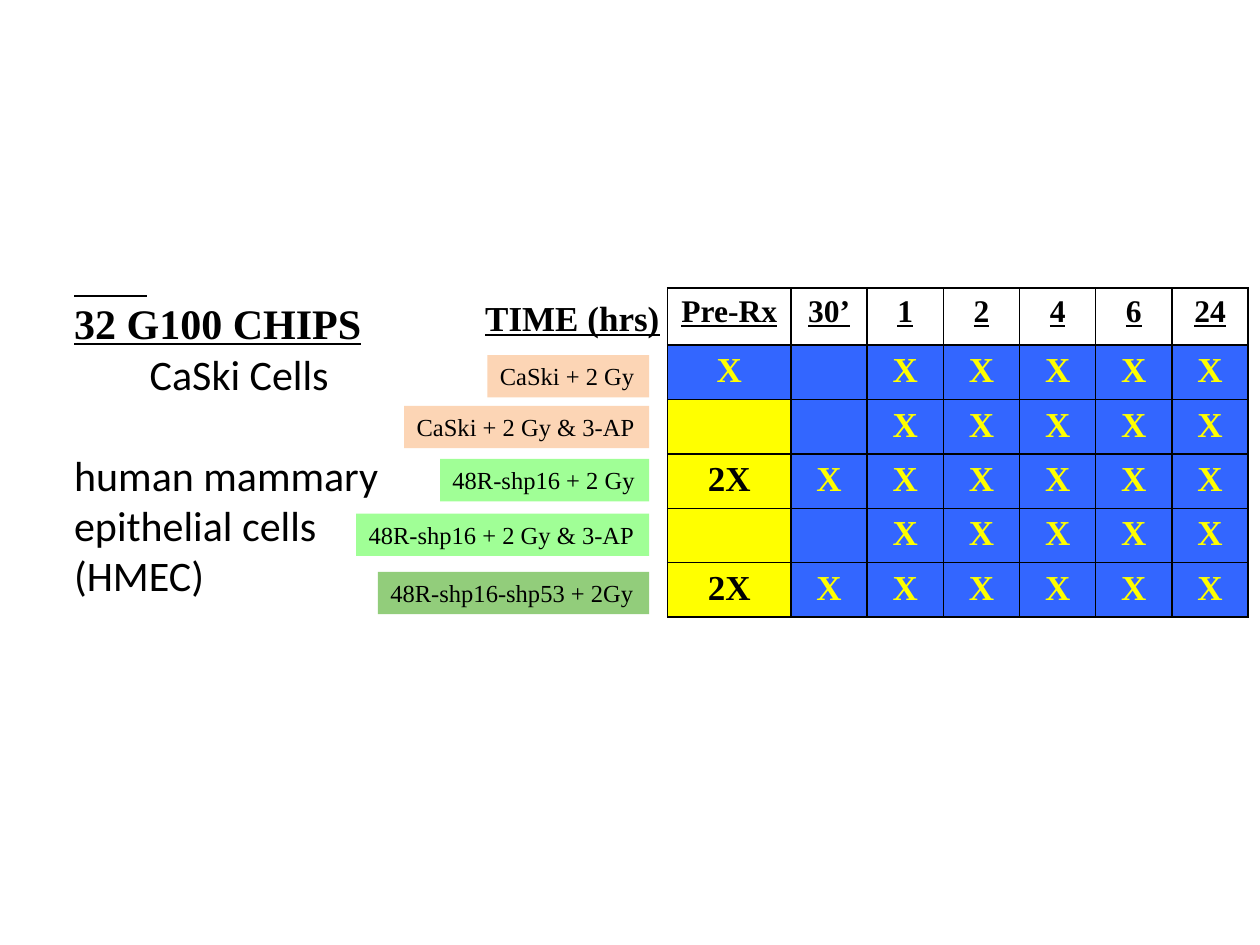
from lxml import etree
from pptx import Presentation
from pptx.dml.color import RGBColor
from pptx.enum.shapes import MSO_CONNECTOR, MSO_SHAPE
from pptx.enum.text import MSO_ANCHOR, PP_ALIGN
from pptx.oxml.ns import qn
from pptx.util import Pt

STRAIGHT = MSO_CONNECTOR.STRAIGHT
RECTANGLE = MSO_SHAPE.RECTANGLE
TOP = MSO_ANCHOR.TOP
LEFT, CENTER, RIGHT = PP_ALIGN.LEFT, PP_ALIGN.CENTER, PP_ALIGN.RIGHT

BLACK = RGBColor(0x00, 0x00, 0x00)
YELLOW = RGBColor(0xFF, 0xFF, 0x00)
BLUE = RGBColor(0x33, 0x66, 0xFF)
PEACH = RGBColor(0xFC, 0xD5, 0xB5)
LIGHT_GREEN = RGBColor(0xA0, 0xFF, 0x96)
GREEN = RGBColor(0x92, 0xCD, 0x7B)

SERIF, SANS = "Times New Roman", "Calibri"
LABEL = {"name": SERIF, "size": Pt(14)}
HEADER = {"name": SERIF, "size": Pt(18), "bold": True, "underline": True}
MARK = {"name": SERIF, "size": Pt(20), "bold": True}
TIME_TITLE = {**MARK, "underline": True}
CHIP_TITLE = {**TIME_TITLE, "size": Pt(24)}
CELLS = {"name": SANS, "size": Pt(24)}


class SlideBuilder:
    def __init__(self, page):
        self.page = page

    def add_text(self, para, text, style, color=BLACK, align=LEFT):
        para.alignment = align
        span = para.add_run()
        span.text = text
        for name, value in style.items():
            setattr(span.font, name, value)
        span.font.color.rgb = color

    def text_box(self, left, top, width, height, paragraphs, wrap=True, align=LEFT):
        box = self.page.shapes.add_textbox(Pt(left), Pt(top), Pt(width), Pt(height))
        frame = box.text_frame
        frame.word_wrap = wrap
        for index, (text, style, indent, before) in enumerate(paragraphs):
            para = frame.add_paragraph() if index else frame.paragraphs[0]
            if indent:
                para._p.get_or_add_pPr().set("marL", str(Pt(indent)))
            if before:
                para.space_before = Pt(before)
            self.add_text(para, text, style, align=align)

    def label(self, right, top, width, height, text, fill):
        box = self.page.shapes.add_shape(
            RECTANGLE, Pt(right - width), Pt(top), Pt(width), Pt(height))
        box.shadow.inherit = False
        box.fill.solid()
        box.fill.fore_color.rgb = fill
        box.line.fill.background()
        frame = box.text_frame
        frame.word_wrap = False
        frame.vertical_anchor = TOP
        self.add_text(frame.paragraphs[0], text, LABEL)

    def line(self, x1, y1, x2, y2, weight):
        rule = self.page.shapes.add_connector(STRAIGHT, Pt(x1), Pt(y1), Pt(x2), Pt(y2))
        rule.line.color.rgb = BLACK
        rule.line.width = Pt(weight)
        etree.SubElement(rule._element.spPr, qn("a:effectLst"))

    def border(self, cell):
        properties = cell._tc.get_or_add_tcPr()
        for position, side in enumerate(("a:lnL", "a:lnR", "a:lnT", "a:lnB")):
            edge = etree.Element(qn(side), w=str(Pt(1)))
            fill = etree.SubElement(edge, qn("a:solidFill"))
            etree.SubElement(fill, qn("a:srgbClr"), val=str(BLACK))
            properties.insert(position, edge)

    def table(self, left, top, widths, heights, rows):
        grid = self.page.shapes.add_table(
            len(rows), len(widths), Pt(left), Pt(top),
            Pt(sum(widths)), Pt(sum(heights))).table
        grid.first_row = grid.horz_banding = False
        for column, width in zip(grid.columns, widths):
            column.width = Pt(width)
        for row, height in zip(grid.rows, heights):
            row.height = Pt(height)
        for r, row in enumerate(rows):
            for c, text in enumerate(row):
                cell = grid.cell(r, c)
                # The baseline column is yellow wherever it is not a single chip
                yellow_cell = c == 0 and text != "X"
                if r == 0:
                    cell.fill.background()
                else:
                    cell.fill.solid()
                    cell.fill.fore_color.rgb = YELLOW if yellow_cell else BLUE
                self.border(cell)
                if text:
                    color = BLACK if r == 0 or yellow_cell else YELLOW
                    self.add_text(cell.text_frame.paragraphs[0], text,
                                  MARK if r else HEADER, color, CENTER)


def main():
    deck = Presentation()
    deck.slide_width, deck.slide_height = Pt(720), Pt(540)
    builder = SlideBuilder(deck.slides.add_slide(deck.slide_layouts[6]))

    # Chip schedule: baseline and 30 minutes vary, later times are always used
    later = ["X"] * 5
    starts = [("X", ""), ("", ""), ("2X", "X"), ("", ""), ("2X", "X")]
    rows = [["Pre-Rx", "30’", "1", "2", "4", "6", "24"]]
    rows += [[*start, *later] for start in starts]
    builder.table(381.5, 164.7, [70.5] + [43.55] * 6, [32.5] + [31.1] * 5, rows)

    # Treatment labels, aligned on their right edge
    for top, width, text, fill in (
        (203, 92.5, "CaSki + 2 Gy", PEACH),
        (232, 140, "CaSki + 2 Gy & 3-AP", PEACH),
        (262.3, 119.5, "48R-shp16 + 2 Gy", LIGHT_GREEN),
        (293.5, 167.5, "48R-shp16 + 2 Gy & 3-AP", LIGHT_GREEN),
        (326.8, 155, "48R-shp16-shp53 + 2Gy", GREEN),
    ):
        builder.label(371, top, width, 24.2, text, fill)

    # Headings and cell descriptions
    builder.text_box(264, 165.6, 120, 31.5, [("TIME (hrs)", TIME_TITLE, 0, 0)],
                     wrap=False, align=RIGHT)
    builder.line(42.5, 169, 84, 169, 1.3)
    builder.text_box(35.3, 166.5, 216, 183.5, [
        ("32 G100 CHIPS", CHIP_TITLE, 0, 0),
        ("CaSki Cells", CELLS, 43.2, 0),
        ("human mammary epithelial cells (HMEC)", CELLS, 0, 29),
    ])

    deck.save("out.pptx")


if __name__ == "__main__":
    main()
